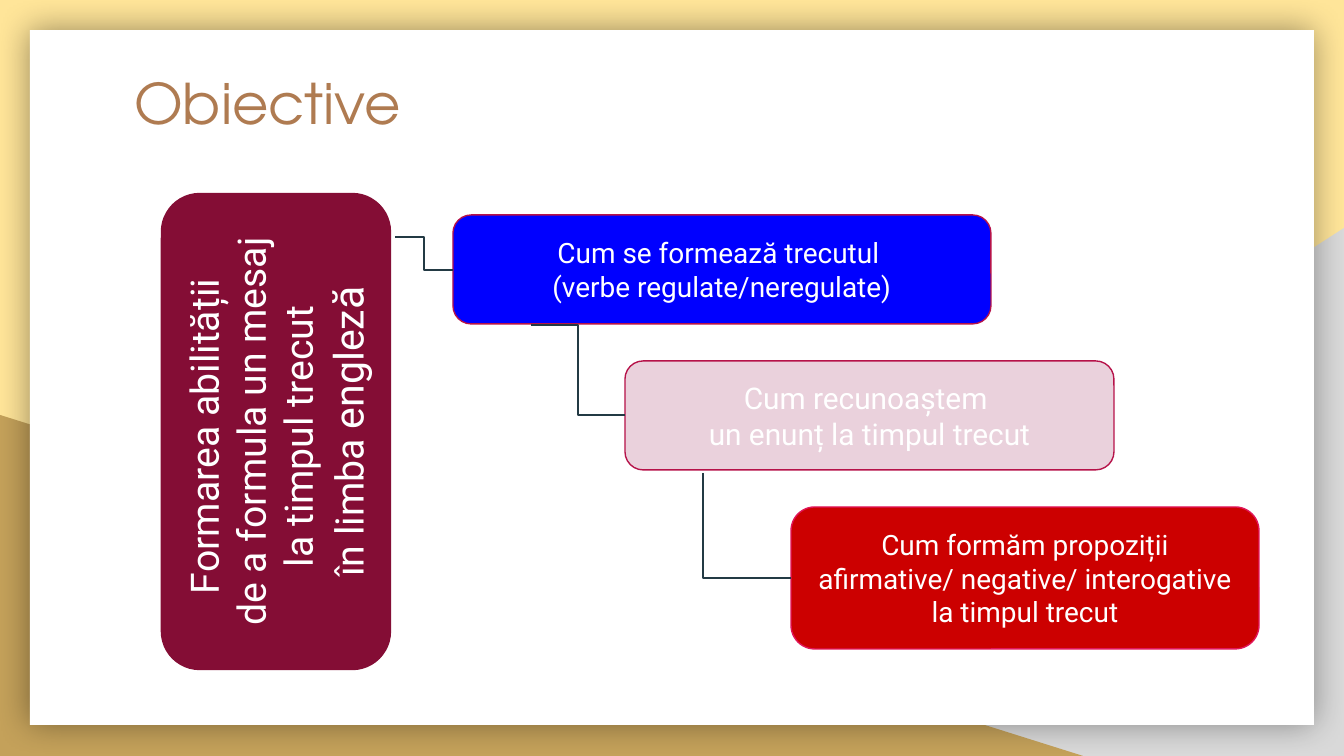
import pptx
import pptx.util
import pptx.dml.color
import pptx.enum.shapes
import pptx.enum.text
import pptx.oxml
import pptx.oxml.ns
from dataclasses import dataclass

EMU_PER_PX = 914400 / 134.4
SHAPES = pptx.enum.shapes.MSO_SHAPE
ALIGN = pptx.enum.text.PP_ALIGN
ANCHOR = pptx.enum.text.MSO_ANCHOR


def px(length):
    return pptx.util.Emu(round(length * EMU_PER_PX))


def rgb(colour):
    return pptx.dml.color.RGBColor.from_string(colour)


def apply_format(target, values):
    for name, value in values.items():
        setattr(target, name, value)


@dataclass(frozen=True)
class Theme:
    background: str = "FFE599"
    grey: str = "D9D9D9"
    tan: str = "C4A15A"
    white: str = "FFFFFF"
    title: str = "AF7B51"
    burgundy: str = "840D35"
    blue: str = "0000FF"
    pink: str = "EAD1DC"
    red: str = "CC0000"
    crimson: str = "B61249"
    rose: str = "E1165A"
    connector: str = "233A44"
    heading_font: str = "TeX Gyre Adventor"
    body_font: str = "Roboto"
    title_size: int = 30
    goal_size: int = 21
    step_size: int = 15
    step_large: int = 16
    line_width: float = 0.75


class SlideBuilder:
    def __init__(self, slide, theme):
        self.slide = slide
        self.theme = theme
        fill = slide.background.fill
        fill.solid()
        fill.fore_color.rgb = rgb(theme.background)

    def shape(self, kind, box, fill, line=None, flip=False):
        shape = self.slide.shapes.add_shape(kind, *map(px, box))
        shape.shadow.inherit = False
        shape.fill.solid()
        shape.fill.fore_color.rgb = rgb(fill)
        if line:
            shape.line.color.rgb = rgb(line)
            shape.line.width = pptx.util.Pt(self.theme.line_width)
        else:
            shape.line.fill.background()
        if flip:
            shape._element.spPr.xfrm.set("flipH", "1")
        return shape

    def panel(self, box):
        panel = self.shape(SHAPES.RECTANGLE, box, self.theme.white)
        effects = panel._element.spPr.find(pptx.oxml.ns.qn("a:effectLst"))
        effects.append(pptx.oxml.parse_xml(
            f'<a:outerShdw {pptx.oxml.ns.nsdecls("a")} blurRad="228600" dist="0" '
            'algn="ctr" rotWithShape="0"><a:srgbClr val="000000">'
            '<a:alpha val="40000"/></a:srgbClr></a:outerShdw>'))

    def set_text(self, frame, paragraphs, size, font, colour, align, anchor):
        inset = pptx.util.Inches(0.1)
        apply_format(frame, {
            "word_wrap": True, "vertical_anchor": anchor,
            "margin_left": inset, "margin_right": inset,
            "margin_top": inset, "margin_bottom": inset})
        for index, runs in enumerate(paragraphs):
            paragraph = frame.add_paragraph() if index else frame.paragraphs[0]
            paragraph.alignment = align
            for text, run_size in runs:
                run = paragraph.add_run()
                run.text = text
                apply_format(run.font, {
                    "name": font, "size": pptx.util.Pt(run_size or size)})
                run.font.color.rgb = rgb(colour)

    def title(self, box, text):
        heading = self.slide.shapes.add_textbox(*map(px, box))
        self.set_text(heading.text_frame, [[(text, None)]], self.theme.title_size,
                      self.theme.heading_font, self.theme.title, ALIGN.LEFT, ANCHOR.TOP)

    def card(self, box, fill, line, paragraphs, size, rotation=0):
        card = self.shape(SHAPES.ROUNDED_RECTANGLE, box, fill, line)
        card.adjustments[0] = 0.167
        card.rotation = rotation
        self.set_text(card.text_frame, paragraphs, size, self.theme.body_font,
                      self.theme.white, ALIGN.CENTER, ANCHOR.MIDDLE)

    def elbow(self, start, end):
        link = self.slide.shapes.add_connector(
            pptx.enum.shapes.MSO_CONNECTOR.ELBOW, *map(px, start + end))
        link.line.color.rgb = rgb(self.theme.connector)
        link.line.width = pptx.util.Pt(self.theme.line_width)
        link._element.spPr.append(pptx.oxml.parse_xml(
            f'<a:effectLst {pptx.oxml.ns.nsdecls("a")}/>'))
        return link

    def corner(self, start, end):
        width, height = end[0] - start[0], end[1] - start[1]
        middle_x, middle_y = (start[0] + end[0]) / 2, (start[1] + end[1]) / 2
        link = self.elbow((middle_x + height / 2, middle_y - width / 2),
                          (middle_x - height / 2, middle_y + width / 2))
        properties = link._element.spPr
        properties.xfrm.set("rot", "16200000")
        properties.find(pptx.oxml.ns.qn("a:prstGeom")).set("prst", "bentConnector2")


def main():
    presentation = pptx.Presentation()
    apply_format(presentation, {"slide_width": px(1344), "slide_height": px(756)})
    theme = Theme()
    slide = presentation.slides.add_slide(presentation.slide_layouts[6])
    builder = SlideBuilder(slide, theme)

    builder.shape(SHAPES.RIGHT_TRIANGLE, (527, 228, 817, 528), theme.grey, flip=True)
    builder.shape(SHAPES.RIGHT_TRIANGLE, (0, 415, 1083, 341), theme.tan)
    builder.panel((30, 30, 1284, 695))
    builder.title((121, 55, 1103, 188), "Obiective")

    goal = [[("Formarea abilității ", None)],
            [("de a formula un mesaj la timpul trecut ", None)],
            [("în limba ", None), ("englez", 22), ("ă", 23)]]
    builder.card((38, 317, 476, 229), theme.burgundy, theme.burgundy,
                 goal, theme.goal_size, rotation=270)

    steps = [
        ((453, 215, 538, 109), theme.blue, theme.crimson, theme.step_size,
         ["Cum se formează trecutul ", "(verbe regulate/neregulate)"]),
        ((625, 361, 489, 109), theme.pink, theme.crimson, theme.step_large,
         ["Cum recunoaștem ", "un enunț la timpul trecut"]),
        ((791, 507, 468, 142), theme.red, theme.rose, theme.step_size,
         ["Cum formăm propoziții afirmative/ negative/ interogative la timpul trecut"]),
    ]
    for box, fill, line, size, lines in steps:
        builder.card(box, fill, line, [[(text, None)] for text in lines], size)

    builder.corner((703, 473), (791, 578))
    builder.elbow((531, 325), (625, 415))
    builder.elbow((395, 237), (453, 270))

    presentation.save("out.pptx")


if __name__ == "__main__":
    main()
